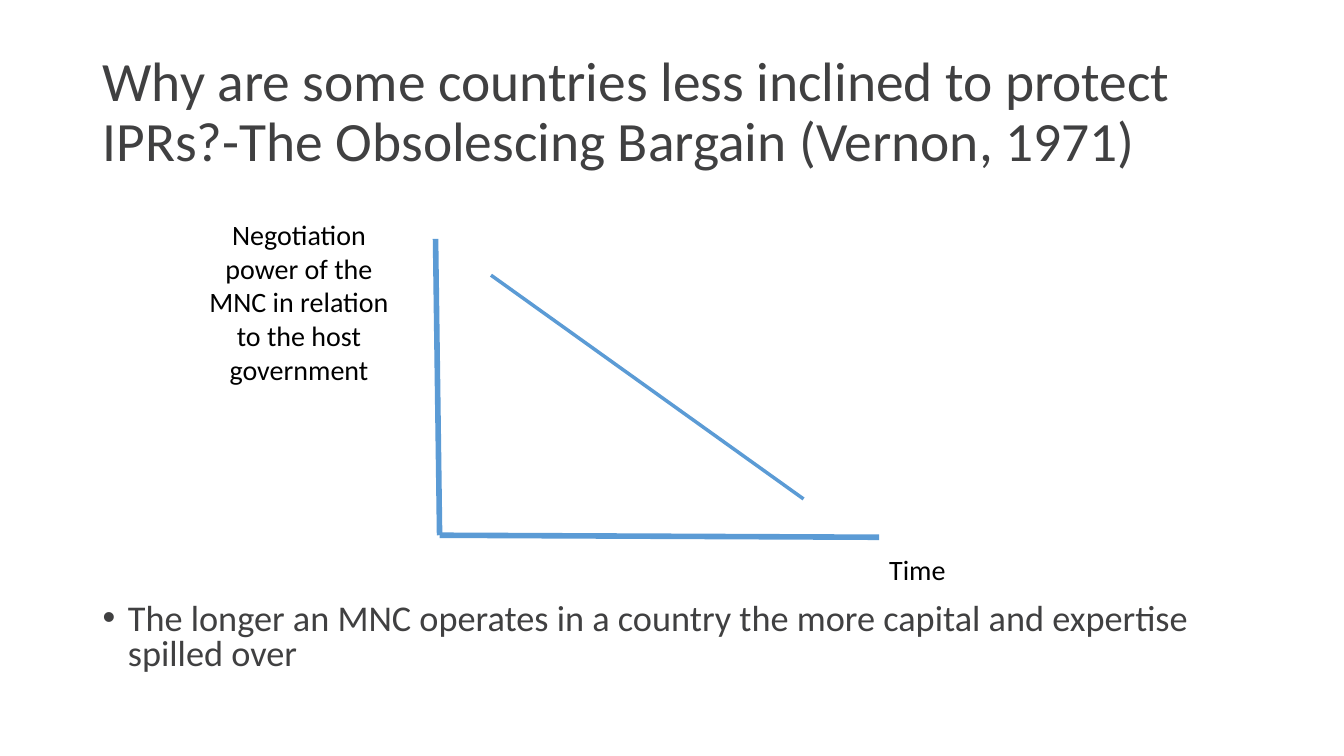
from dataclasses import dataclass

from lxml.etree import SubElement
from pptx import Presentation
from pptx.dml.color import RGBColor as Rgb
from pptx.enum.shapes import MSO_CONNECTOR as Conn
from pptx.enum.text import MSO_ANCHOR as Anchor, PP_ALIGN as Align
from pptx.oxml.ns import qn
from pptx.util import Inches, Pt


@dataclass(frozen=True)
class Theme:
    font: str = "Calibri"
    ink: Rgb = Rgb(0x40, 0x40, 0x41)
    black: Rgb = Rgb(0, 0, 0)
    blue: Rgb = Rgb(0x5B, 0x9B, 0xD5)
    title: float = 39.6
    body: float = 25.9
    label: float = 20
    axis: float = 4
    curve: float = 2.5


THEME = Theme()


def add_text(slide, box, text, size, color, align=Align.LEFT,
             anchor=Anchor.TOP, spacing=1.0):
    """Add a wrapped one-paragraph text box and return its paragraph."""
    frame = slide.shapes.add_textbox(*map(Inches, box)).text_frame
    frame.word_wrap = True
    frame.vertical_anchor = anchor
    para = frame.paragraphs[0]
    para.alignment = align
    para.line_spacing = spacing
    run = para.add_run()
    run.text = text
    run.font.name = THEME.font
    run.font.size = Pt(size)
    run.font.color.rgb = color
    return para


def add_line(slide, start, end, width):
    line = slide.shapes.add_connector(
        Conn.STRAIGHT, *map(Inches, (*start, *end)))
    line.line.color.rgb = THEME.blue
    line.line.width = Pt(width)
    SubElement(line._element.spPr, qn("a:effectLst"))


def add_title(slide, box):
    add_text(slide, box,
             "Why are some countries less inclined to protect "
             "IPRs?-The Obsolescing Bargain (Vernon, 1971)",
             THEME.title, THEME.ink, anchor=Anchor.MIDDLE, spacing=0.9)


def add_graph(slide, box):
    """Draw the axes, the falling line and the axis labels in the box."""
    left, top, width, height = box
    right, base = left + width, top + height
    corner = (left + 0.04, base - 0.02)
    add_line(slide, (left, top), corner, THEME.axis)
    add_line(slide, corner, (right, base), THEME.axis)
    add_line(slide, (left + 0.55, top + 0.36),
             (right - 0.75, base - 0.38), THEME.curve)
    add_text(slide, (right, base + 0.1, 1.41, 0.44), "Time",
             THEME.label, THEME.black)
    add_text(slide, (left - 2.45, top - 0.26, 2.19, 1.78),
             "Negotiation power of the MNC in relation to the host government",
             THEME.label, THEME.black, align=Align.CENTER)


def add_point(slide, box):
    para = add_text(slide, box,
                    "The longer an MNC operates in a country the more "
                    "capital and expertise spilled over",
                    THEME.body, THEME.ink, spacing=0.8)
    props = para._p.get_or_add_pPr()
    props.set("marL", str(Inches(0.25)))
    props.set("indent", str(Inches(-0.25)))
    SubElement(props, qn("a:buFont"), typeface="Arial")
    SubElement(props, qn("a:buChar"), char="•")


def main():
    deck = Presentation()
    deck.slide_width, deck.slide_height = Inches(13.33), Inches(7.5)
    slide = deck.slides.add_slide(deck.slide_layouts[6])
    add_title(slide, (0.92, 0.4, 11.5, 1.45))
    add_graph(slide, (4.32, 2.37, 4.4, 2.96))
    add_point(slide, (0.92, 5.94, 11.5, 0.81))
    deck.save("out.pptx")


if __name__ == "__main__":
    main()
